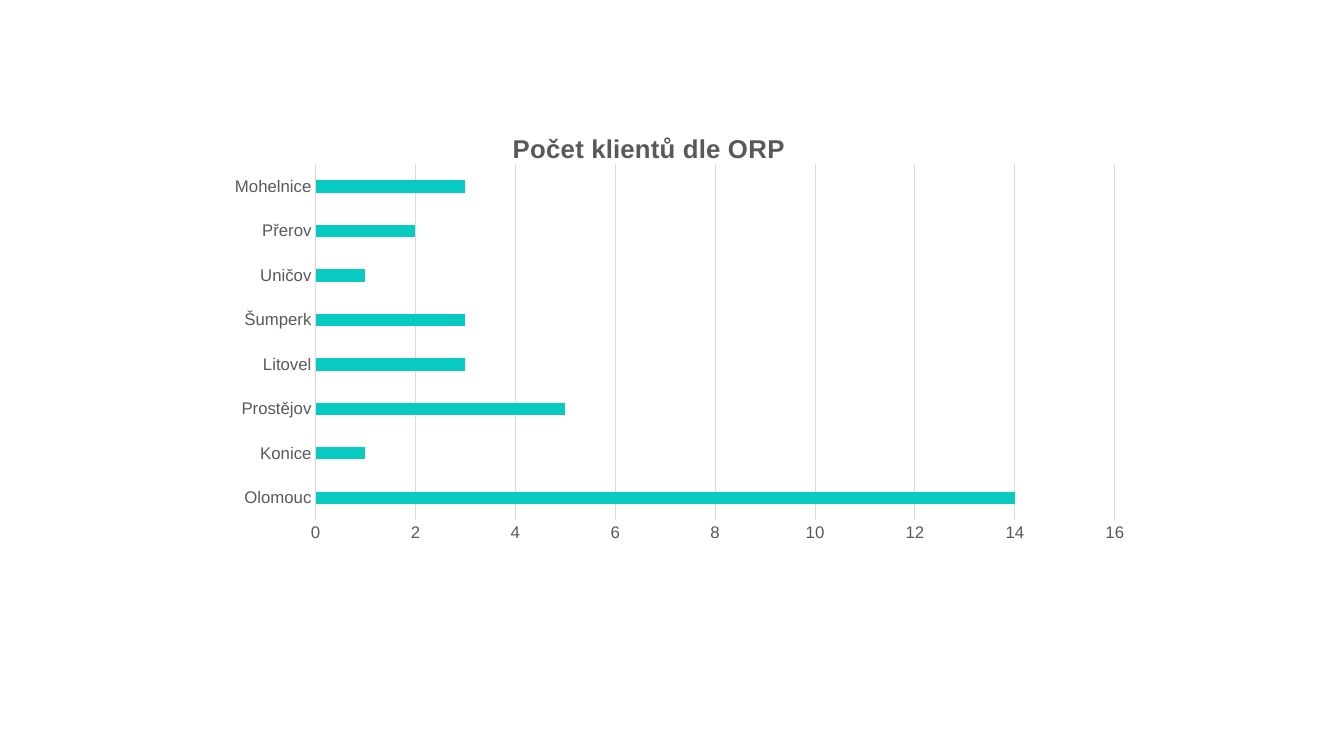
from lxml import etree
from pptx import Presentation
from pptx.chart.data import CategoryChartData
from pptx.dml.color import RGBColor
from pptx.enum.chart import XL_CHART_TYPE, XL_TICK_MARK
from pptx.oxml.ns import qn
from pptx.util import Inches, Pt

COLORS = {"background": "FFFFFF", "text": "595959", "grid": "D9D9D9", "bar": "08CAC1"}
SLIDE_WIDTH, SLIDE_HEIGHT = 13.33, 7.5
CHART_WIDTH, CHART_HEIGHT = 9.35, 4.53
CLIENTS = {
    "Olomouc": 14, "Konice": 1, "Prostějov": 5, "Litovel": 3,
    "Šumperk": 3, "Uničov": 1, "Přerov": 2, "Mohelnice": 3,
}


def color(name):
    return RGBColor.from_string(COLORS[name])


def format_font(font, size, bold=False):
    font.name = "Arial"
    font.size = Pt(size)
    font.bold = bold
    font.color.rgb = color("text")


def write_text(paragraph, text, **style):
    run = paragraph.add_run()
    run.text = text
    format_font(run.font, **style)


def set_layout(element, index, target=None, **shares):
    """Place a chart part by shares of the chart's size."""
    for previous in element.findall(qn("c:layout")):
        element.remove(previous)
    layout = etree.Element(qn("c:layout"))
    manual = etree.SubElement(layout, qn("c:manualLayout"))
    values = {"layoutTarget": target} if target else {}
    values.update(xMode="edge", yMode="edge", **shares)
    for tag, value in values.items():
        etree.SubElement(manual, qn(f"c:{tag}")).set("val", str(value))
    element.insert(index, layout)


class SlideBuilder:
    def __init__(self, presentation):
        self.width = presentation.slide_width
        self.height = presentation.slide_height
        self.slide = presentation.slides.add_slide(presentation.slide_layouts[6])
        fill = self.slide.background.fill
        fill.solid()
        fill.fore_color.rgb = color("background")

    def bar_chart(self, values, left, top, width, height):
        """Add a bar chart placed by shares of the slide's size."""
        data = CategoryChartData()
        data.categories = list(values)
        data.add_series("Series 1", list(values.values()))
        chart = self.slide.shapes.add_chart(
            XL_CHART_TYPE.BAR_CLUSTERED,
            round(self.width * left), round(self.height * top),
            round(self.width * width), round(self.height * height), data,
        ).chart
        chart.has_legend = False
        format_font(chart.font, size=12)

        # Bars
        plot = chart.plots[0]
        plot.gap_width = 259
        plot.vary_by_categories = False
        fill = plot.series[0].format.fill
        fill.solid()
        fill.fore_color.rgb = color("bar")
        return chart

    def chart_title(self, chart, text, **shares):
        chart.has_title = True
        title = chart.chart_title
        write_text(title.text_frame.paragraphs[0], text, size=18.4, bold=True)
        title.include_in_layout = False
        set_layout(title._element, 1, **shares)

    def chart_axes(self, chart, maximum, step):
        for axis in (chart.category_axis, chart.value_axis):
            axis.major_tick_mark = axis.minor_tick_mark = XL_TICK_MARK.NONE
            format_font(axis.tick_labels.font, size=12)
        value_axis = chart.value_axis
        value_axis.minimum_scale = 0
        value_axis.maximum_scale = maximum
        value_axis.major_unit = step
        value_axis.has_major_gridlines = True
        value_axis.format.line.fill.background()
        for part in (chart.category_axis, value_axis.major_gridlines):
            part.format.line.color.rgb = color("grid")
            part.format.line.width = Pt(0.75)


def main():
    presentation = Presentation()
    presentation.slide_width = Inches(SLIDE_WIDTH)
    presentation.slide_height = Inches(SLIDE_HEIGHT)
    builder = SlideBuilder(presentation)

    # Clients by municipality
    chart = builder.bar_chart(
        CLIENTS, left=1.8 / SLIDE_WIDTH, top=1.11 / SLIDE_HEIGHT,
        width=CHART_WIDTH / SLIDE_WIDTH, height=CHART_HEIGHT / SLIDE_HEIGHT,
    )
    builder.chart_axes(chart, maximum=16, step=2)

    # Title above the plot area
    builder.chart_title(
        chart, "Počet klientů dle ORP", x=3.24 / CHART_WIDTH, y=0.15 / CHART_HEIGHT
    )
    set_layout(
        chart._chartSpace.chart.plotArea, 0, target="inner",
        x=1.33 / CHART_WIDTH, y=0.52 / CHART_HEIGHT,
        w=7.93 / CHART_WIDTH, h=3.53 / CHART_HEIGHT,
    )

    presentation.save("out.pptx")


if __name__ == "__main__":
    main()
